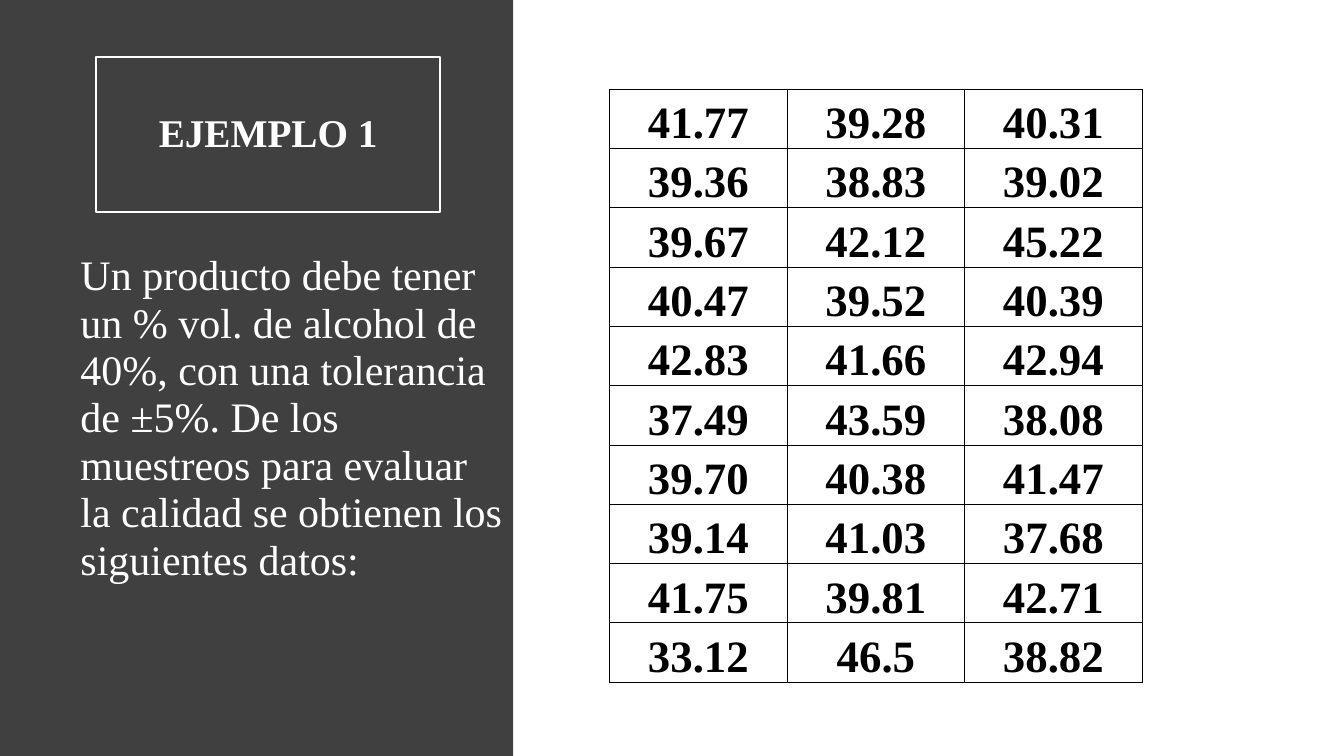
from dataclasses import dataclass

from lxml import etree
from pptx import Presentation
from pptx.dml.color import RGBColor
from pptx.enum import shapes, text
from pptx.oxml import ns
from pptx.util import Pt

WHITE, BLACK, GRAY = "FFFFFF", "000000", "404040"
FONT = "Times New Roman"
DATA = (
    ("41.77", "39.28", "40.31"),
    ("39.36", "38.83", "39.02"),
    ("39.67", "42.12", "45.22"),
    ("40.47", "39.52", "40.39"),
    ("42.83", "41.66", "42.94"),
    ("37.49", "43.59", "38.08"),
    ("39.70", "40.38", "41.47"),
    ("39.14", "41.03", "37.68"),
    ("41.75", "39.81", "42.71"),
    ("33.12", "46.5", "38.82"),
)


@dataclass
class Box:
    left: float
    top: float
    width: float
    height: float

    def size(self) -> tuple:
        return Pt(self.left), Pt(self.top), Pt(self.width), Pt(self.height)


@dataclass
class Style:
    size: float
    color: str
    bold: bool = False
    align: text.PP_ALIGN = text.PP_ALIGN.CENTER
    lead: float = 1.0


HEAD = Style(28, WHITE, True, lead=0.9)
BODY = Style(30, WHITE, align=text.PP_ALIGN.LEFT, lead=0.94)
CELL = Style(32, BLACK, True)


def tint(code: str) -> RGBColor:
    return RGBColor.from_string(code)


def write(frame, words: str, style: Style) -> None:
    frame.word_wrap = True
    para = frame.paragraphs[0]
    para.alignment = style.align
    para.line_spacing = style.lead
    run = para.add_run()
    run.text = words
    run.font.name = FONT
    run.font.size = Pt(style.size)
    run.font.bold = style.bold
    run.font.color.rgb = tint(style.color)


def edge(cell, color: str, width: float) -> None:
    props = cell._tc.get_or_add_tcPr()
    for spot, side in enumerate(("lnL", "lnR", "lnT", "lnB")):
        line = etree.Element(ns.qn(f"a:{side}"), w=str(Pt(width)))
        fill = etree.SubElement(line, ns.qn("a:solidFill"))
        etree.SubElement(fill, ns.qn("a:srgbClr"), val=color)
        props.insert(spot, line)


def add_panel(slide, box: Box) -> None:
    panel = slide.shapes.add_shape(shapes.MSO_SHAPE.RECTANGLE, *box.size())
    panel.shadow.inherit = False
    panel.fill.solid()
    panel.fill.fore_color.rgb = tint(GRAY)
    panel.line.fill.background()
    tree = slide.shapes._spTree
    tree.remove(panel._element)
    tree.insert(2, panel._element)


def set_title(slide, words: str, box: Box) -> None:
    title = slide.shapes.title
    title.left, title.top, title.width, title.height = box.size()
    title.line.color.rgb = tint(WHITE)
    title.line.width = Pt(1.5)
    title.text_frame.vertical_anchor = text.MSO_ANCHOR.MIDDLE
    write(title.text_frame, words, HEAD)


def add_text(slide, words: str, box: Box) -> None:
    note = slide.shapes.add_textbox(*box.size())
    write(note.text_frame, words, BODY)


def add_data(slide, box: Box) -> None:
    table = slide.shapes.add_table(len(DATA), len(DATA[0]), *box.size()).table
    table.first_row = table.horz_banding = False
    for col in table.columns:
        col.width = Pt(box.width / len(DATA[0]))
    for row, values in zip(table.rows, DATA):
        row.height = Pt(box.height / len(DATA))
        for cell, value in zip(row.cells, values):
            cell.fill.background()
            cell.margin_left = cell.margin_right = cell.margin_top = Pt(0.7)
            cell.margin_bottom = 0
            cell.vertical_anchor = text.MSO_ANCHOR.BOTTOM
            write(cell.text_frame, value, CELL)
            edge(cell, BLACK, 0.5)


def main() -> None:
    deck = Presentation()
    deck.slide_width, deck.slide_height = Pt(960), Pt(540)
    slide = deck.slides.add_slide(deck.slide_layouts[5])
    add_panel(slide, Box(0, 0, 366.5, 540))
    set_title(slide, "EJEMPLO 1", Box(68.7, 40.6, 245.6, 110.8))
    add_text(
        slide,
        "Un producto debe tener un % vol. de alcohol de 40%, con una "
        "tolerancia de ±5%. De los muestreos para evaluar la calidad "
        "se obtienen los siguientes datos:",
        Box(50.4, 177.1, 316.1, 299.5),
    )
    add_data(slide, Box(435.5, 63.7, 380.4, 423.5))
    deck.save("out.pptx")


if __name__ == "__main__":
    main()
